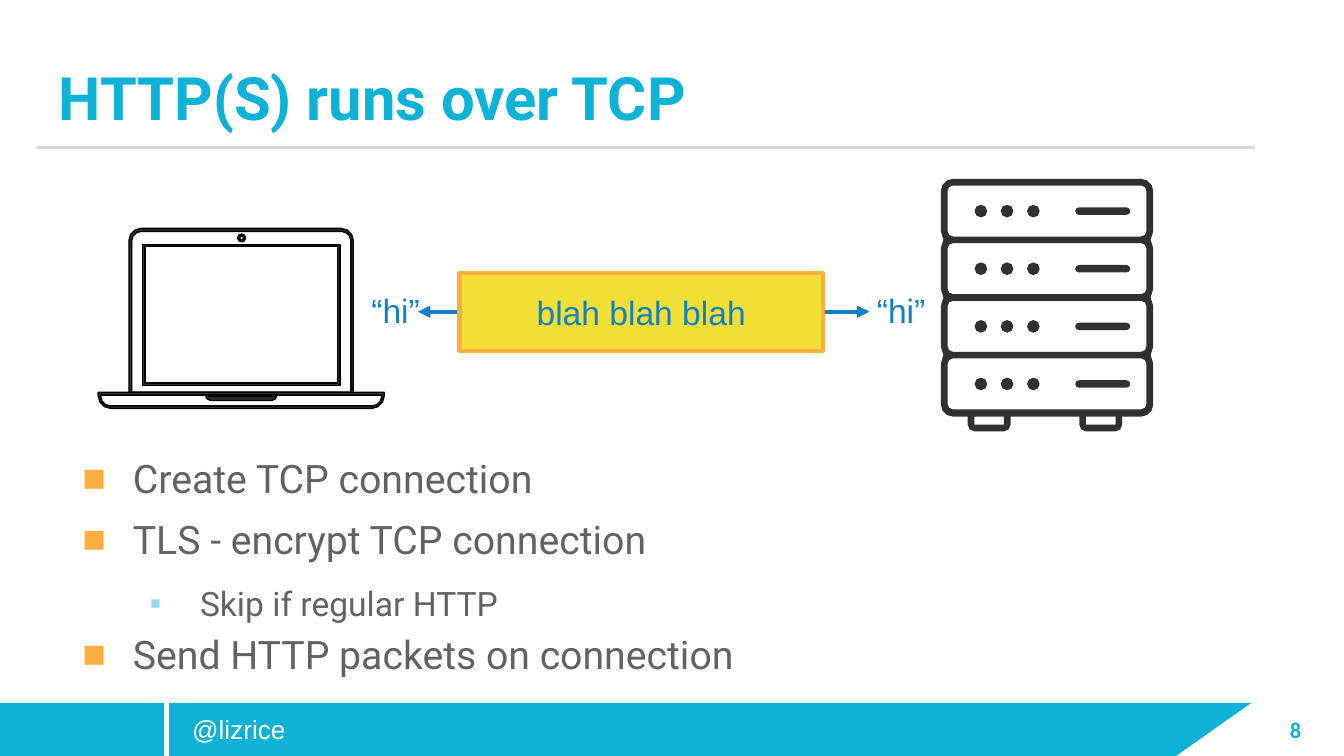
"""Build the slide that shows HTTP(S) running over a TCP connection."""
from math import cos, pi, sin

from lxml.etree import SubElement
from pptx import Presentation
from pptx.dml.color import RGBColor
from pptx.enum.shapes import MSO_CONNECTOR as Connector, MSO_SHAPE as Shape
from pptx.enum.text import MSO_ANCHOR as Anchor, PP_ALIGN as Align
from pptx.oxml.ns import qn
from pptx.util import Pt

CYAN = RGBColor(0x0E, 0xB2, 0xD6)
BLUE = RGBColor(0x11, 0x80, 0xC4)
PALE_BLUE = RGBColor(0x99, 0xD8, 0xEF)
YELLOW = RGBColor(0xF1, 0xDF, 0x36)
ORANGE = RGBColor(0xFB, 0xAF, 0x42)
GREY = RGBColor(0x64, 0x61, 0x64)
RULE_GREY = RGBColor(0xD8, 0xD8, 0xD8)
DARK = RGBColor(0x30, 0x2F, 0x31)
BLACK = RGBColor(0, 0, 0)
WHITE = RGBColor(0xFF, 0xFF, 0xFF)

TITLE = "HTTP(S) runs over TCP"
HANDLE = "@lizrice"
PAGE_NUMBER = "8"
MESSAGE = "blah blah blah"
GREETING = "“hi”"
GREETING_LEFTS = (190, 460.8)
BULLET_BOXES = [
    (232.6, 36, [("Create TCP connection", 0)]),
    (265.3, 64, [("TLS - encrypt TCP connection", 0), ("Skip if regular HTTP", 1)]),
    (326.9, 50, [("Send HTTP packets on connection", 0)]),
]
LEVELS = [
    dict(size=21, line_spacing=1.15, before=7.5, bullet="■", bullet_color=ORANGE),
    dict(size=18, line_spacing=1.5, bullet="▪", bullet_color=PALE_BLUE),
]
FOOTER_TOP, FOOTER_HEIGHT = 376.6, 28.4
FOOTER_PARTS = [(Shape.RECTANGLE, 90.6, 539.4), (Shape.RECTANGLE, 0, 87.9),
                (Shape.RIGHT_TRIANGLE, 630, 40.3)]
MESSAGE_BOX = (246.2, 146.2, 194.6, 41.8)

SCREEN = [(76.3, 131, 105.9, 75.6, 0, 0), (77.8, 131.8, 103, 73.4, 0, 0)]
CAMERA = [(127.4, 125.4, 4.2, 4.2, 2.1, 2.1), (128.5, 126.5, 2, 2, 1, 1)]
LAPTOP = [
    (69.1, 122.4, 120.2, 87.8, 6.5, 0), (70.6, 124, 117.4, 86.2, 5, 0),
    (52.6, 210.2, 153.3, 8.7, 0, 7), (54, 211.7, 150.5, 5.8, 0, 5),
    (110.2, 211.7, 38.1, 2.9, 0, 2.8), (111.6, 211.7, 35.3, 0.8, 0, 0.7),
]
RACK = (504, 95.8, 113.8, 127.4, 6.5, 6.5)
RACK_ROWS, ROW_PITCH, RACK_WALL = 4, 30.87, 3.6
DOT_CENTERS, DOT_RADIUS = (525.5, 539.5, 553.6), 3.4
FOOT_LEFTS = (518.4, 578.2)


def rounded(left, top, width, height, top_radius, bottom_radius):
    """Return the outline of a box clockwise from its left side."""
    right, bottom = left + width, top + height
    corners = [
        (left + top_radius, top + top_radius, top_radius),
        (right - top_radius, top + top_radius, top_radius),
        (right - bottom_radius, bottom - bottom_radius, bottom_radius),
        (left + bottom_radius, bottom - bottom_radius, bottom_radius),
    ]
    points = []
    for turn, (x, y, radius) in enumerate(corners):
        steps = 3 if radius > 4 else 2
        for step in range(steps + 1):
            angle = pi + (turn + step / steps) * pi / 2
            points.append((round(x + radius * cos(angle), 2),
                           round(y + radius * sin(angle), 2)))
    return list(dict.fromkeys(points))


def rack_outlines():
    """Return the outlines of the server rack."""
    left, top, width, height = RACK[:4]
    outline = rounded(*RACK)
    joints = [top + RACK_WALL / 2 + ROW_PITCH * row for row in range(1, RACK_ROWS)]
    notches = [(inset, joint + shift) for joint in joints
               for inset, shift in ((0, -4.6), (1.4, 0), (0, 4.6))]
    middle = len(outline) // 2
    outlines = [outline[:middle] + [(left + width - inset, y) for inset, y in notches]
                + outline[middle:] + [(left + inset, y) for inset, y in reversed(notches)]]
    for row in range(RACK_ROWS):
        row_top = top + RACK_WALL + ROW_PITCH * row
        center = row_top + 13.7
        boxes = [(left + RACK_WALL, row_top, width - 2 * RACK_WALL, 27.3, 2.9, 2.9),
                 (576, center - 2, 29.5, 4, 2, 2)]
        boxes += [(x - DOT_RADIUS, center - DOT_RADIUS, 2 * DOT_RADIUS, 2 * DOT_RADIUS,
                   DOT_RADIUS, DOT_RADIUS) for x in DOT_CENTERS]
        outlines += [rounded(*box) for box in boxes]
    for foot in FOOT_LEFTS:
        outlines += [rounded(foot, top + height, 23, 7.9, 0, 3.6),
                     rounded(foot + RACK_WALL, top + height, 15.8, 4.3, 0, 0)]
    return outlines


def paint(shape, fill, line=None, weight=0.75):
    """Set the fill and line of a shape."""
    shape.shadow.inherit = False
    shape.fill.solid()
    shape.fill.fore_color.rgb = fill
    if line is None:
        shape.line.fill.background()
    else:
        shape.line.color.rgb = line
        shape.line.width = Pt(weight)


def add_icon(page, outlines, line=None):
    """Draw closed outlines as one shape."""
    builder = None
    for outline in outlines:
        points = [(Pt(x), Pt(y)) for x, y in outline]
        if builder is None:
            builder = page.shapes.build_freeform(*points[0], scale=1.0)
        else:
            builder.move_to(*points[0])
        builder.add_line_segments(points[1:], close=True)
    paint(builder.convert_to_shape(), DARK, line)


def add_line(page, x1, x2, y, color, weight, arrows=False):
    """Draw a level line, with arrowheads if asked."""
    line = page.shapes.add_connector(Connector.STRAIGHT, Pt(x1), Pt(y), Pt(x2), Pt(y))
    line.line.color.rgb = color
    line.line.width = Pt(weight)
    if arrows:
        for end in ("a:headEnd", "a:tailEnd"):
            SubElement(line.element.spPr.find(qn("a:ln")), qn(end), type="triangle")
    SubElement(line.element.spPr, qn("a:effectLst"))


def add_box(page, left, top, width, height):
    """Add an empty text box."""
    return page.shapes.add_textbox(Pt(left), Pt(top), Pt(width), Pt(height))


def write(box, text, *, size, color, font="Arial", bold=False, align=Align.LEFT,
          anchor=Anchor.MIDDLE, inset=7.2, line_spacing=None, before=0,
          level=0, bullet=None, bullet_color=None, new=False):
    """Write one formatted paragraph into a box."""
    frame = box.text_frame
    frame.word_wrap = True
    frame.vertical_anchor = anchor
    frame.margin_left = frame.margin_right = Pt(7.2)
    frame.margin_top = frame.margin_bottom = Pt(inset)
    para = frame.add_paragraph() if new else frame.paragraphs[0]
    if bullet:
        props = para._p.get_or_add_pPr()
        props.set("marL", str(Pt(36 * (level + 1))))
        props.set("indent", str(Pt(-27)))
        tint = SubElement(props, qn("a:buClr"))
        SubElement(tint, qn("a:srgbClr"), val=str(bullet_color))
        SubElement(props, qn("a:buFont"), typeface="Arial")
        SubElement(props, qn("a:buChar"), char=bullet)
    para.level = level
    para.alignment = align
    if line_spacing:
        para.line_spacing = line_spacing
    if new:
        para.space_before = Pt(before)
    span = para.add_run()
    span.text = text
    span.font.name, span.font.size, span.font.bold = font, Pt(size), bold
    span.font.color.rgb = color


def main():
    """Lay out the slide and save it."""
    deck = Presentation()
    deck.slide_width, deck.slide_height = Pt(720), Pt(405)
    page = deck.slides.add_slide(deck.slide_layouts[6])
    add_line(page, 19.8, 672.4, 79.2, RULE_GREY, 1.5)
    for kind, left, width in FOOTER_PARTS:
        part = page.shapes.add_shape(kind, Pt(left), Pt(FOOTER_TOP), Pt(width), Pt(FOOTER_HEIGHT))
        paint(part, CYAN)
        if kind == Shape.RIGHT_TRIANGLE:
            part.rotation = 180
            part.element.spPr.find(qn("a:xfrm")).set("flipH", "1")
    write(add_box(page, 671.8, 380.2, 32.4, 21.6), PAGE_NUMBER, size=12, color=CYAN,
          font="Calibri", bold=True, align=Align.RIGHT, anchor=Anchor.TOP, inset=3.6)
    write(add_box(page, 95.8, FOOTER_TOP, 202.3, FOOTER_HEIGHT), HANDLE, size=14, color=WHITE)
    write(add_box(page, 24.5, 10.1, 643, 68.4), TITLE, size=32, color=CYAN, font="Roboto",
          bold=True, anchor=Anchor.BOTTOM, line_spacing=0.9)
    for boxes in (SCREEN, CAMERA, LAPTOP):
        add_icon(page, [rounded(*box) for box in boxes], BLACK)
    add_icon(page, rack_outlines())
    add_line(page, 223.9, 465.8, 167, BLUE, 2.25, arrows=True)
    message = page.shapes.add_shape(Shape.RECTANGLE, *map(Pt, MESSAGE_BOX))
    paint(message, YELLOW, ORANGE, 2.25)
    write(message, MESSAGE, size=18, color=BLUE, align=Align.CENTER)
    for top, height, items in BULLET_BOXES:
        box = add_box(page, 28.1, top, 620.6, height)
        for index, (text, level) in enumerate(items):
            write(box, text, color=GREY, font="Roboto", anchor=Anchor.TOP, level=level,
                  new=index > 0, **LEVELS[level])
    for left in GREETING_LEFTS:
        write(add_box(page, left, 145.4, 43.9, 41.8), GREETING, size=18, color=BLUE,
              align=Align.CENTER)
    deck.save("out.pptx")


if __name__ == "__main__":
    main()
